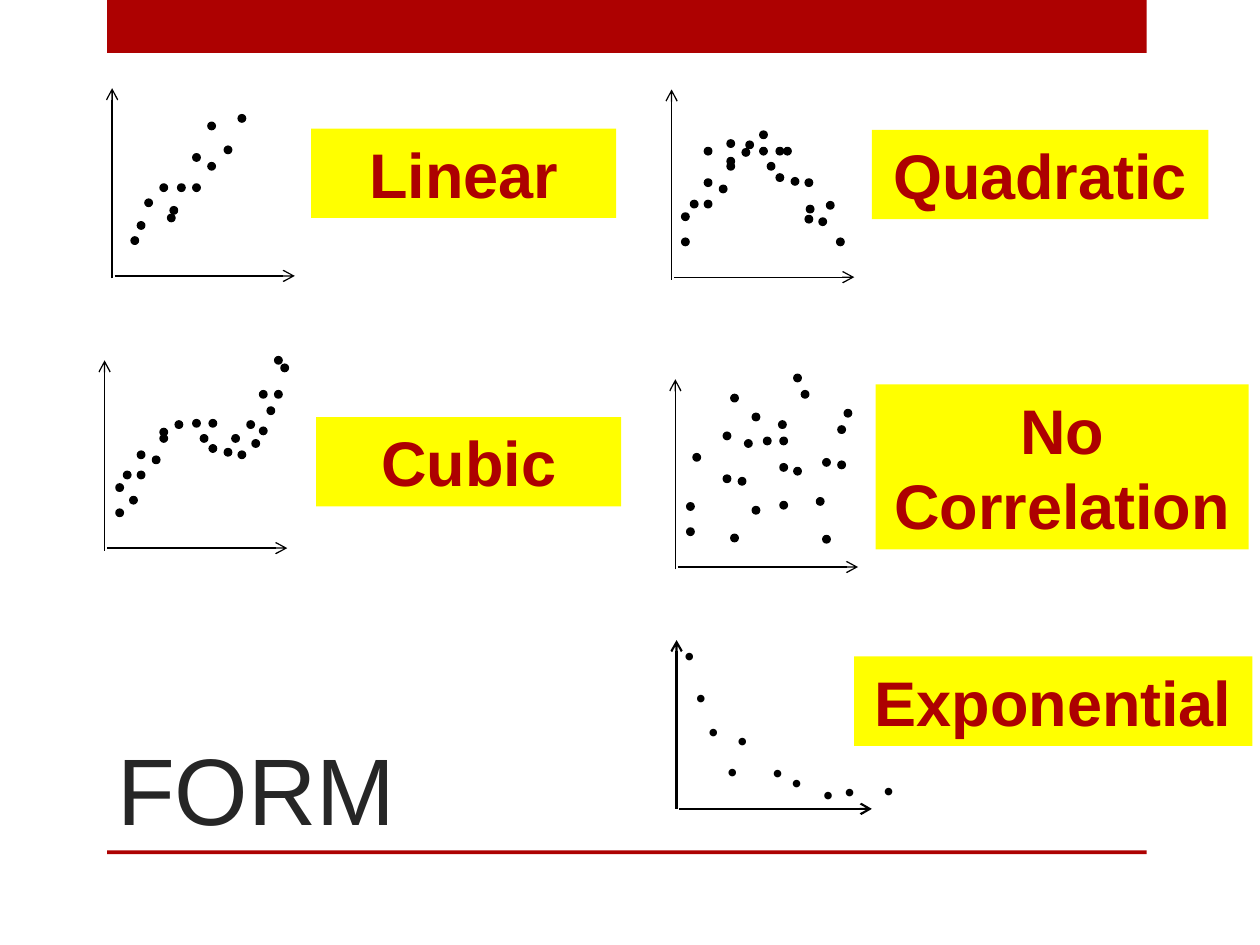
from dataclasses import dataclass

from lxml import etree
from pptx import Presentation
from pptx.dml.color import RGBColor
from pptx.enum.shapes import MSO_CONNECTOR, MSO_SHAPE
from pptx.enum.text import MSO_ANCHOR, MSO_AUTO_SIZE, PP_ALIGN
from pptx.oxml.ns import qn
from pptx.util import Inches, Pt

RECT, OVAL = MSO_SHAPE.RECTANGLE, MSO_SHAPE.OVAL
LINE = MSO_CONNECTOR.STRAIGHT
LEFT, CENTER = PP_ALIGN.LEFT, PP_ALIGN.CENTER
MIDDLE, BOTTOM = MSO_ANCHOR.MIDDLE, MSO_ANCHOR.BOTTOM
GROW, FIXED = MSO_AUTO_SIZE.SHAPE_TO_FIT_TEXT, MSO_AUTO_SIZE.NONE

RED, YELLOW, BLACK, GREY = "AD0101", "FFFF00", "000000", "262626"
DOT = 0.06
GAP = 0.02


@dataclass
class Plot:
    """Axes by their top left corner, with the left and top of each mark."""
    left: float
    top: float
    dots: list[tuple[float, float]]
    high: float = 1.51
    wide: float = 1.43
    lift: float = 0.02
    weight: float = 0.75
    typed: bool = False


@dataclass
class Label:
    text: str
    left: float
    top: float
    wide: float
    high: float = 0.71


PLOTS = [
    Plot(0.89, 0.7, [
        (1.04, 1.88), (1.33, 1.7), (1.09, 1.76), (1.65, 0.97), (1.41, 1.46),
        (1.27, 1.46), (1.35, 1.64), (1.53, 1.22), (1.78, 1.16), (1.65, 1.29),
        (1.15, 1.58), (1.89, 0.91), (1.53, 1.46)]),
    Plot(5.33, 0.71, [
        (5.48, 1.59), (6.39, 1.71), (5.59, 1.42), (6.16, 1.17), (5.92, 1.12),
        (5.71, 1.47), (5.77, 1.29), (6.03, 1.17), (6.22, 1.17), (6.09, 1.29),
        (5.59, 1.59), (6.39, 1.42), (6.56, 1.6), (6.5, 1.73), (5.89, 1.18),
        (6.03, 1.04), (6.16, 1.38), (6.4, 1.63), (6.64, 1.89), (5.41, 1.69),
        (5.77, 1.11), (5.77, 1.25), (6.28, 1.41), (5.59, 1.17), (5.41, 1.89)]),
    Plot(0.83, 2.86, [
        (0.98, 3.74), (2.18, 3.1), (1.09, 3.58), (1.66, 3.33), (1.03, 3.94),
        (1.21, 3.62), (1.27, 3.45), (1.53, 3.33), (1.84, 3.45), (1.59, 3.45),
        (1.09, 3.74), (1.89, 3.58), (2.12, 3.23), (2.06, 3.39), (1.39, 3.34),
        (2, 3.49), (1.66, 3.53), (1.96, 3.34), (2.23, 2.89), (0.92, 3.84),
        (2.18, 2.83), (1.27, 3.4), (1.78, 3.56), (2.06, 3.1), (0.92, 4.04)]),
    Plot(5.36, 3.01, [
        (5.5, 3.6), (6.7, 3.25), (5.8, 3.13), (6.19, 3.47), (5.8, 4.24),
        (5.74, 3.77), (5.86, 3.79), (6.06, 3.47), (5.97, 3.28), (5.74, 3.43),
        (5.97, 4.02), (6.48, 3.95), (6.65, 3.38), (6.65, 3.66), (5.91, 3.49),
        (6.53, 3.64), (6.19, 3.68), (6.18, 3.34), (6.36, 3.1), (5.45, 3.99),
        (6.3, 2.97), (6.19, 3.98), (6.3, 3.71), (6.53, 4.25), (5.45, 4.19)]),
    Plot(5.37, 5.08, [
        (5.33, 5), (5.42, 5.33), (5.52, 5.6), (5.75, 5.67), (5.67, 5.92),
        (6.03, 5.93), (6.18, 6.01), (6.6, 6.08), (6.91, 6.07), (6.43, 6.1)],
        high=1.34, wide=1.53, lift=0, weight=1.25, typed=True),
]

LABELS = [
    Label("Quadratic", 6.92, 1.03, 2.67),
    Label("Linear", 2.47, 1.02, 2.42),
    Label("No Correlation", 6.95, 3.05, 2.96, 1.31),
    Label("Cubic", 2.51, 3.31, 2.42),
    Label("Exponential", 6.78, 5.21, 3.16),
]


def paint(form, color: str) -> None:
    """Set a solid colour on a fill or a font."""
    fill = form.fill
    fill.solid()
    fill.fore_color.rgb = RGBColor.from_string(color)


def add_block(shapes, kind, box: tuple, color: str):
    shape = shapes.add_shape(kind, *map(Inches, box))
    shape.shadow.inherit = False
    paint(shape, color)
    shape.line.fill.background()
    return shape


def add_run(frame, text: str, size: float, color: str, face="Arial",
            bold=False, align=LEFT) -> None:
    para = frame.paragraphs[0]
    para.alignment = align
    run = para.add_run()
    run.text = text
    run.font.name, run.font.size, run.font.bold = face, Pt(size), bold
    paint(run.font, color)


def add_arrow(shapes, start: tuple, end: tuple, weight: float) -> None:
    line = shapes.add_connector(LINE, *map(Inches, start + end))
    paint(line.line, BLACK)
    line.line.width = Pt(weight)
    tail = etree.SubElement(line.line._get_or_add_ln(), qn("a:tailEnd"))
    tail.set("type", "arrow")
    etree.SubElement(line._element.spPr, qn("a:effectLst"))


def add_dot(shapes, left: float, top: float, typed: bool) -> None:
    if typed:
        box = shapes.add_textbox(*map(Inches, (left, top, 0.32, 0.4)))
        box.text_frame.word_wrap = False
        box.text_frame.auto_size = GROW
        add_run(box.text_frame, "•", 18, BLACK, "Times New Roman")
    else:
        dot = add_block(shapes, OVAL, (left, top, DOT, DOT), BLACK)
        paint(dot.line, BLACK)
        dot.line.width = Pt(0.75)


def add_plot(slide, plot: Plot) -> None:
    shapes = slide.shapes.add_group_shape().shapes
    foot = plot.top + plot.high
    add_arrow(shapes, (plot.left, foot), (plot.left, plot.top), plot.weight)
    start, base = plot.left + GAP, foot - plot.lift
    add_arrow(shapes, (start, base), (start + plot.wide, base), plot.weight)
    for left, top in plot.dots:
        add_dot(shapes, left, top, plot.typed)


def add_label(slide, label: Label) -> None:
    box = (label.left, label.top, label.wide, label.high)
    frame = add_block(slide.shapes, RECT, box, YELLOW).text_frame
    frame.word_wrap = True
    frame.auto_size = GROW
    frame.vertical_anchor = MIDDLE
    add_run(frame, label.text, 36, RED, bold=True, align=CENTER)


def set_title(slide, text: str) -> None:
    title = slide.shapes.title
    title.left, title.top = Inches(0.83), Inches(5)
    title.width, title.height = Inches(2.75), Inches(1.75)
    frame = title.text_frame
    frame.auto_size = FIXED
    frame.vertical_anchor = BOTTOM
    add_run(frame, text, 54, GREY)


def main() -> None:
    deck = Presentation()
    deck.slide_width, deck.slide_height = Inches(10), Inches(7.5)
    slide = deck.slides.add_slide(deck.slide_layouts[5])
    for top, high in ((0, 0.42), (6.75, 0.03)):
        add_block(slide.shapes, RECT, (0.85, top, 8.25, high), RED)
    set_title(slide, "FORM")
    for plot in PLOTS:
        add_plot(slide, plot)
    for label in LABELS:
        add_label(slide, label)
    deck.save("out.pptx")


if __name__ == "__main__":
    main()
